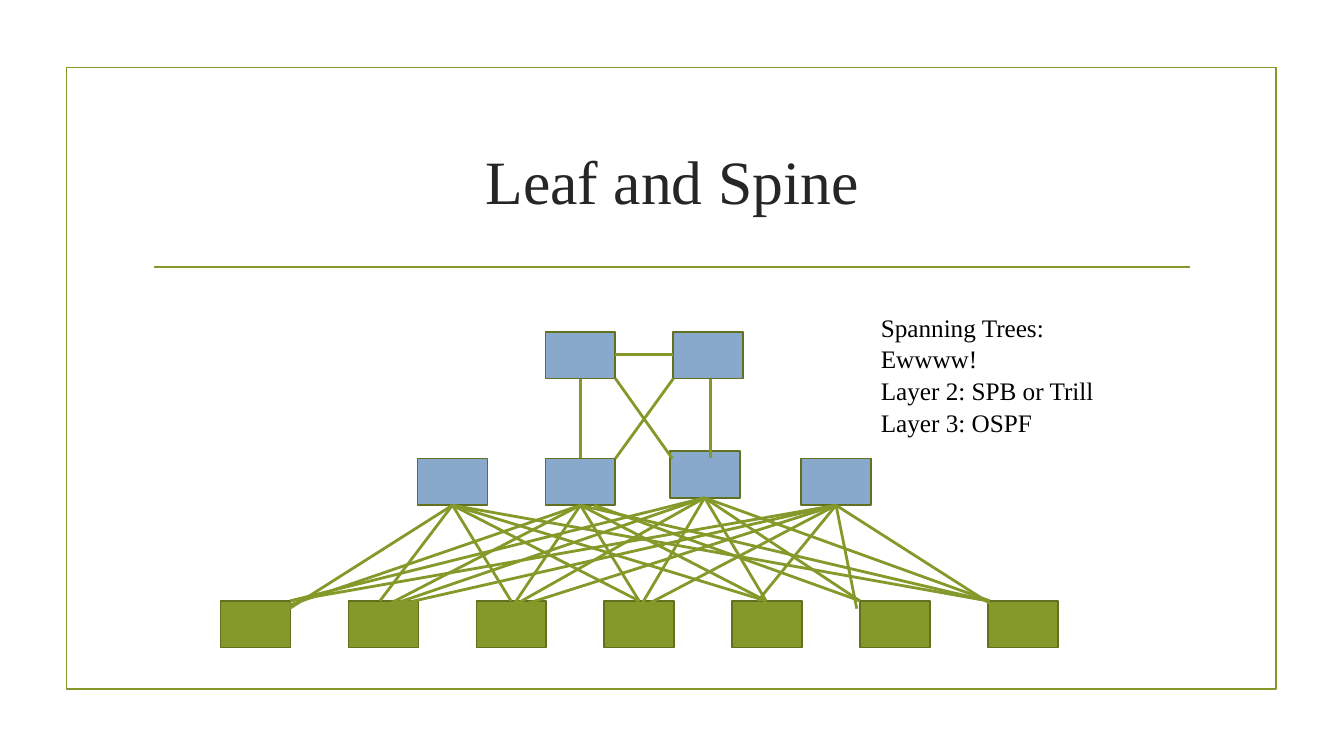
from dataclasses import dataclass

from lxml.etree import SubElement
from pptx import Presentation
from pptx.dml.color import RGBColor
from pptx.enum.shapes import MSO_CONNECTOR as Conn, MSO_SHAPE as Kind
from pptx.enum.text import MSO_ANCHOR as Anchor, PP_ALIGN as Align
from pptx.oxml.ns import qn
from pptx.slide import Slide
from pptx.text.text import TextFrame
from pptx.util import Pt


@dataclass(frozen=True)
class Theme:
    font: str = "Times New Roman"
    green: str = "83992A"
    edge: str = "61711F"
    blue: str = "88A9CB"
    title: str = "262626"
    body: str = "000000"
    head_size: float = 44
    note_size: float = 18
    thin: float = 1.25
    thick: float = 2


@dataclass(frozen=True)
class Box:
    x: float
    y: float
    w: float = 50
    h: float = 33.4

    @property
    def mid(self) -> float:
        return self.x + self.w / 2

    @property
    def right(self) -> float:
        return self.x + self.w

    @property
    def foot(self) -> float:
        return self.y + self.h


@dataclass(frozen=True)
class Line:
    x1: float
    y1: float
    x2: float
    y2: float
    width: float = 2


@dataclass(frozen=True)
class Shift:
    """Moves the ends of one link away from its usual points."""
    dx: float = 0
    dy: float = 0
    start: float = 0


THEME = Theme()
FRAME = Box(47.5, 48.2, 864, 444.2)
HEAD = Box(102.2, 77, 756, 103)
NOTE = Box(622.1, 218.2, 195.8, 72.7)
NOTES = "Spanning Trees: Ewwww!\nLayer 2: SPB or Trill\nLayer 3: OSPF"

LEAVES = [Box(157.6 + 91.35 * i, 429.2) for i in range(7)]
SPINES = [Box(298.2, 327.5), Box(389.6, 327.5), Box(478.8, 322.2), Box(572.2, 327.5)]
CORES = [Box(389.6, 237), Box(481, 237)]

# Where links land on each leaf, left to right.
DOCKS = [207.4, 271.4, 365, 456.5, 547.2, 614.2, 705.6]
MISSING = {(0, 5)}
DIP = Shift(dy=5.6)
SHIFTS = {
    (0, 0): Shift(-0.8, 5.6), (1, 0): Shift(dy=2.8),
    (1, 1): DIP, (2, 1): DIP, (3, 1): DIP,
    (1, 2): DIP, (2, 2): Shift(-2.2, 5.6), (3, 2): DIP,
    (2, 3): DIP, (3, 3): DIP, (3, 4): Shift(-5.8),
    (1, 5): Shift(start=10), (3, 5): Shift(-2.2, 5.6),
    (2, 6): Shift(1.4), (3, 6): Shift(24.5, 16.5),
}


def links() -> list[Line]:
    """Joins every spine to every leaf, then the cores to the inner spines."""
    lines = []
    for s, spine in enumerate(SPINES):
        for n, dock in enumerate(DOCKS):
            if (s, n) in MISSING:
                continue
            move = SHIFTS.get((s, n), Shift())
            start = (503.3 if s == 2 else spine.mid) + move.start
            lines.append(Line(start, spine.foot, dock + move.dx, LEAVES[n].y + move.dy))
    left, right = CORES
    top, low = left.foot, SPINES[1].y
    return lines + [
        Line(left.right, top, 480.2, low),
        Line(right.x, top, left.right, low),
        Line(left.mid, top, left.mid, low),
        Line(507.6, top, 507.6, low),
        Line(right.x, 253.5, left.right, 253.5),
    ]


def tint(name: str) -> RGBColor:
    return RGBColor.from_string(name)


def draw_box(slide: Slide, box: Box, fill: str | None, edge: str) -> None:
    shape = slide.shapes.add_shape(Kind.RECTANGLE, Pt(box.x), Pt(box.y), Pt(box.w), Pt(box.h))
    shape.shadow.inherit = False
    if fill:
        shape.fill.solid()
        shape.fill.fore_color.rgb = tint(fill)
    else:
        shape.fill.background()
    shape.line.color.rgb = tint(edge)
    shape.line.width = Pt(THEME.thin)


def draw_line(slide: Slide, line: Line) -> None:
    wire = slide.shapes.add_connector(
        Conn.STRAIGHT, Pt(line.x1), Pt(line.y1), Pt(line.x2), Pt(line.y2))
    wire.line.color.rgb = tint(THEME.green)
    wire.line.width = Pt(line.width)
    SubElement(wire._element.spPr, qn("a:effectLst"))


def style(frame: TextFrame, size: float, color: str, align: Align) -> None:
    frame.word_wrap = True
    for para in frame.paragraphs:
        para.alignment = align
        for run in para.runs:
            run.font.name = THEME.font
            run.font.size = Pt(size)
            run.font.color.rgb = tint(color)


def draw_head(slide: Slide) -> None:
    head = slide.shapes.title
    head.left, head.top = Pt(HEAD.x), Pt(HEAD.y)
    head.width, head.height = Pt(HEAD.w), Pt(HEAD.h)
    frame = head.text_frame
    frame.text = "Leaf and Spine"
    frame.vertical_anchor = Anchor.MIDDLE
    style(frame, THEME.head_size, THEME.title, Align.CENTER)


def draw_note(slide: Slide) -> None:
    note = slide.shapes.add_textbox(Pt(NOTE.x), Pt(NOTE.y), Pt(NOTE.w), Pt(NOTE.h))
    frame = note.text_frame
    frame.text = NOTES
    style(frame, THEME.note_size, THEME.body, Align.LEFT)
    for para in frame.paragraphs:
        para.line_spacing = 1.05


def main() -> None:
    deck = Presentation()
    deck.slide_width, deck.slide_height = Pt(960), Pt(540)
    slide = deck.slides.add_slide(deck.slide_layouts[5])
    draw_box(slide, FRAME, None, THEME.green)
    draw_line(slide, Line(110.2, 190.8, 850.3, 190.8, THEME.thin))
    draw_head(slide)
    for leaf in LEAVES:
        draw_box(slide, leaf, THEME.green, THEME.edge)
    for node in SPINES + CORES:
        draw_box(slide, node, THEME.blue, THEME.edge)
    for line in links():
        draw_line(slide, line)
    draw_note(slide)
    deck.save("out.pptx")


if __name__ == "__main__":
    main()
